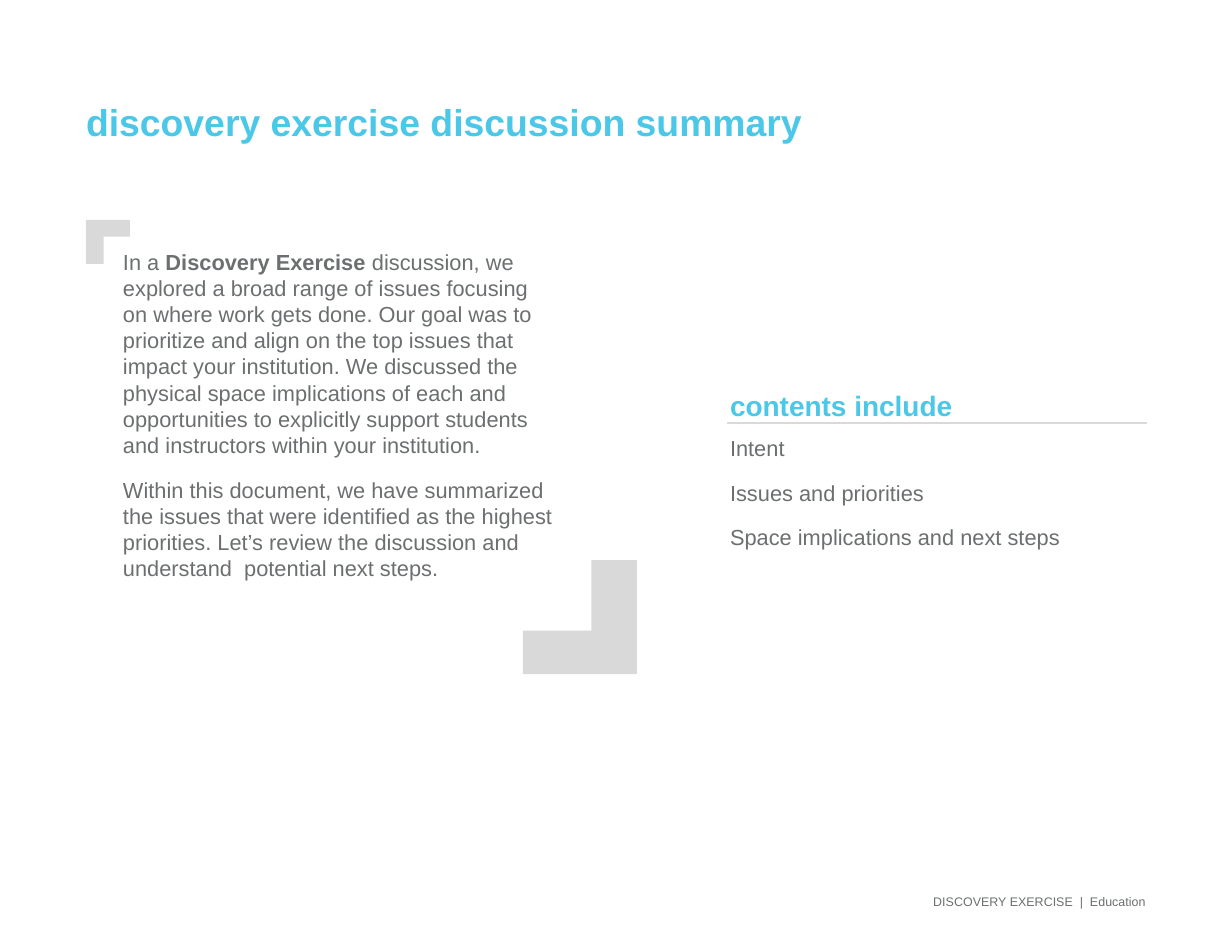
import dataclasses

import pptx
import pptx.dml.color
import pptx.enum.shapes
import pptx.enum.text
import pptx.oxml.ns
import pptx.util
from lxml import etree

SCALE = 914400 // 112  # EMU in one px
ALIGN = pptx.enum.text.PP_ALIGN
ANCHOR = pptx.enum.text.MSO_ANCHOR
SHAPE = pptx.enum.shapes.MSO_SHAPE


@dataclasses.dataclass(frozen=True)
class Theme:
    font: str = "Arial"
    accent: str = "4BC7E7"
    ink: str = "6C6F70"
    pale: str = "D9D9D9"
    title: int = 24
    head: int = 18
    body: int = 14
    foot: int = 8


def px(*sizes):
    return [pptx.util.Emu(size * SCALE) for size in sizes]


def rgb(code):
    return pptx.dml.color.RGBColor.from_string(code)


class Page:
    def __init__(self, slide, theme):
        self.slide = slide
        self.theme = theme

    def text(self, box, paras, size, color, bold=False, after=0, lead=None,
             align=ALIGN.LEFT, anchor=ANCHOR.TOP):
        """Add paragraphs, each a list of runs; every second run flips bold."""
        frame = self.slide.shapes.add_textbox(*px(*box)).text_frame
        frame.word_wrap = True
        frame.vertical_anchor = anchor
        for i, runs in enumerate(paras):
            para = frame.add_paragraph() if i else frame.paragraphs[0]
            para.alignment = align
            para.space_after = pptx.util.Pt(after)
            if lead:
                para.line_spacing = pptx.util.Pt(lead)
            for j, words in enumerate(runs):
                run = para.add_run()
                run.text = words
                run.font.name = self.theme.font
                run.font.size = pptx.util.Pt(size)
                run.font.bold = bold != bool(j % 2)
                run.font.color.rgb = rgb(color)

    def corner(self, box, turn):
        shape = self.slide.shapes.add_shape(SHAPE.CORNER, *px(*box))
        shape.shadow.inherit = False
        shape.adjustments[0] = 0.4
        shape.adjustments[1] = 0.38
        shape.rotation = turn
        shape.fill.solid()
        shape.fill.fore_color.rgb = rgb(self.theme.pale)
        shape.line.fill.background()

    def rule(self, *ends):
        line = self.slide.shapes.add_connector(
            pptx.enum.shapes.MSO_CONNECTOR.STRAIGHT, *px(*ends))
        line.line.color.rgb = rgb(self.theme.pale)
        line.line.width = pptx.util.Pt(0.75)
        etree.SubElement(line._element.spPr, pptx.oxml.ns.qn("a:effectLst"))


def main():
    deck = pptx.Presentation()
    deck.slide_width, deck.slide_height = px(1232, 952)
    theme = Theme()
    page = Page(deck.slides.add_slide(deck.slide_layouts[6]), theme)

    page.text((75, 104, 1064, 45), [["discovery exercise discussion summary"]],
              theme.title, theme.accent, bold=True, anchor=ANCHOR.BOTTOM)

    page.corner((86, 220, 44, 44), 90)
    page.corner((523, 560, 114, 114), 270)
    intro = [
        ["In a ", "Discovery Exercise ",
         "discussion, we explored a broad range of issues focusing on where "
         "work gets done. Our goal was to prioritize and align on the top "
         "issues that impact your institution. We discussed the physical "
         "space implications of each and opportunities to explicitly support "
         "students and instructors within your institution."],
        ["Within this document, we have summarized the issues that were "
         "identified as the highest priorities. Let’s review the discussion "
         "and understand  potential next steps."],
    ]
    page.text((112, 243, 457, 426), intro, theme.body, theme.ink,
              after=12, lead=16.8)

    page.text((719, 383, 429, 37), [["contents include"]],
              theme.head, theme.accent, bold=True, lead=21.6)
    page.rule(1147, 423, 727, 423)
    topics = ["Intent", "Issues and priorities",
              "Space implications and next steps"]
    page.text((719, 429, 429, 458), [[topic] for topic in topics],
              theme.body, theme.ink, after=12, lead=16.8)

    page.text((812, 888, 345, 27), [["DISCOVERY EXERCISE  |  Education"]],
              theme.foot, theme.ink, align=ALIGN.RIGHT, anchor=ANCHOR.MIDDLE)
    deck.save("out.pptx")


if __name__ == "__main__":
    main()
